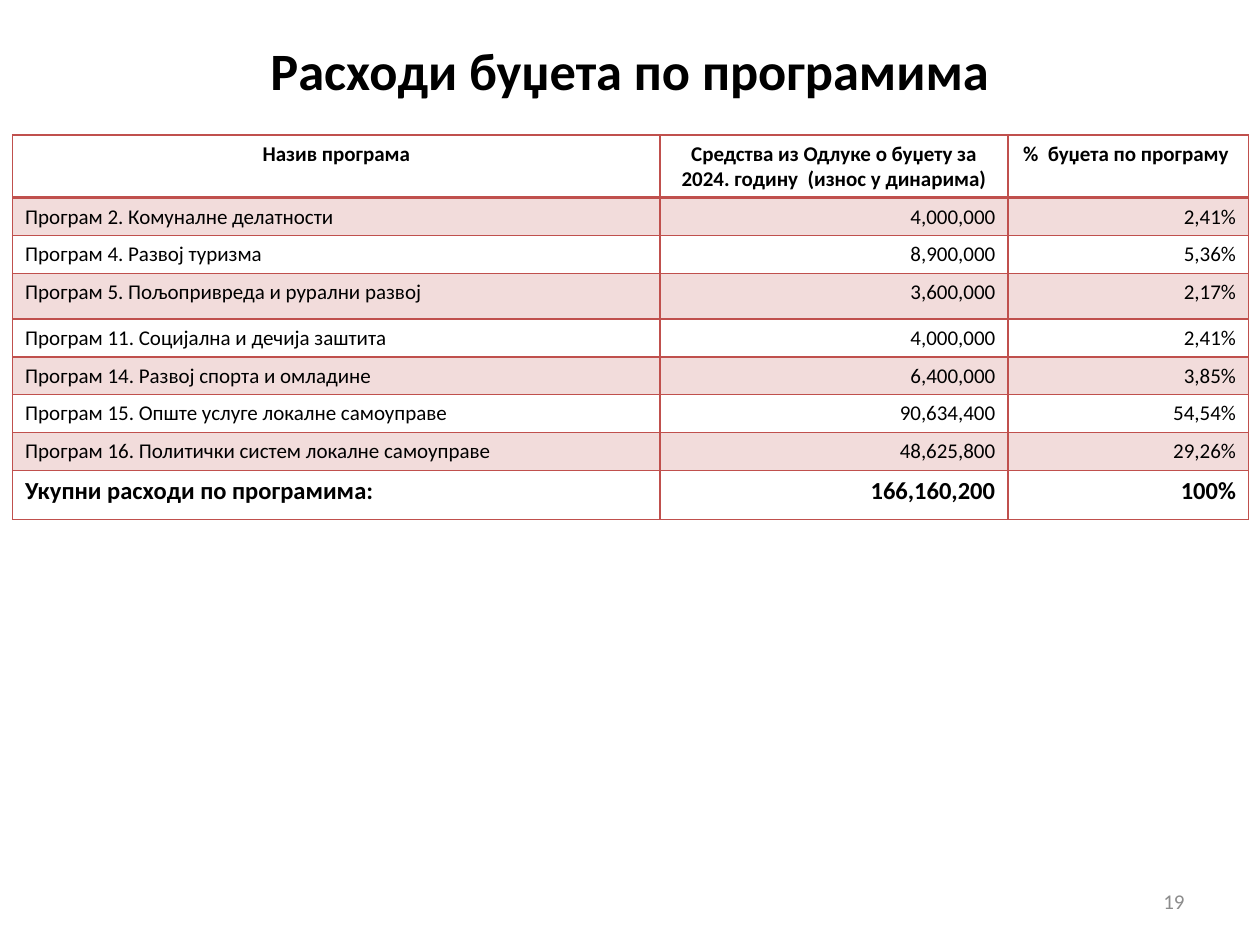
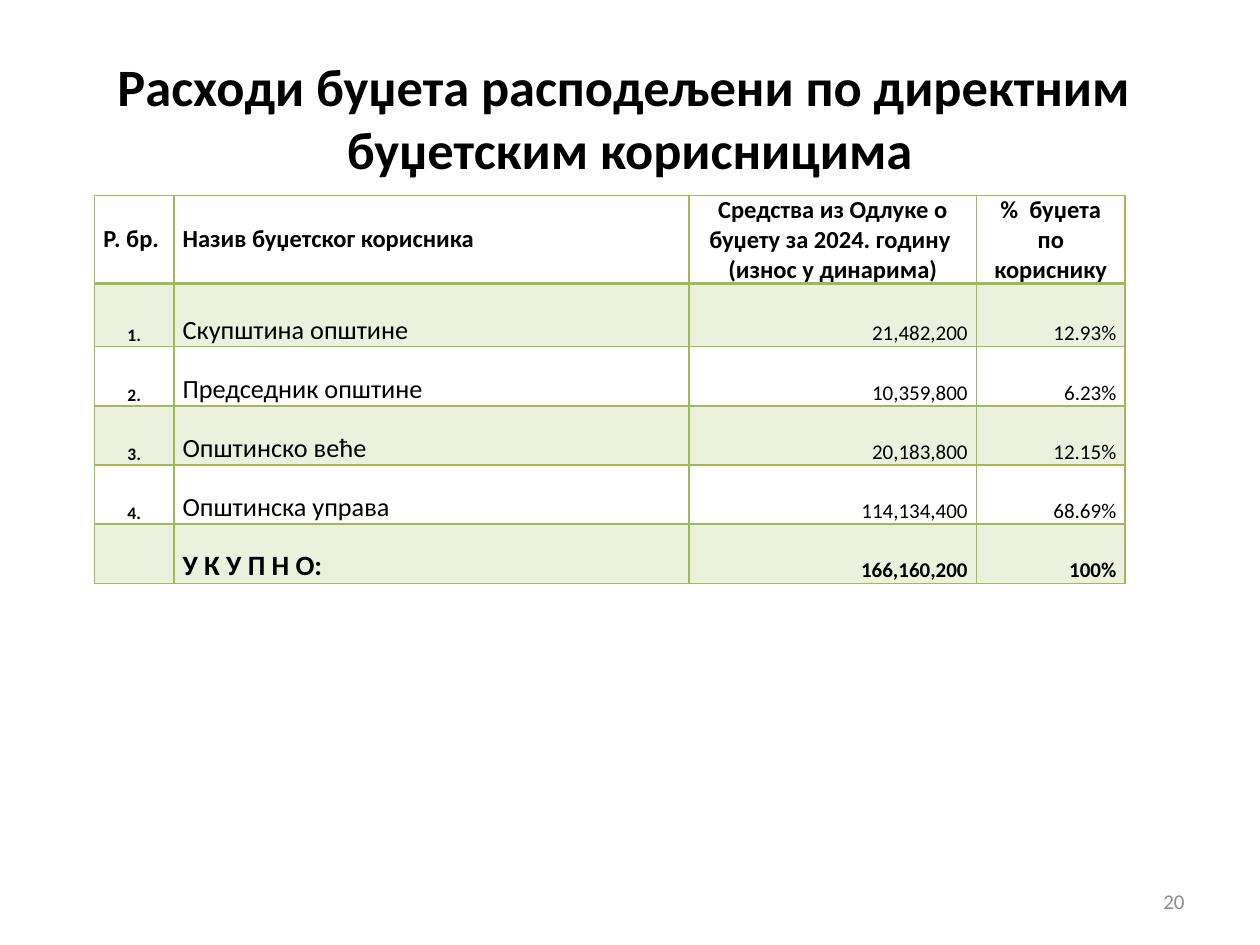
from pptx import Presentation
from pptx.dml.color import RGBColor
from pptx.enum.text import MSO_ANCHOR, PP_ALIGN
from pptx.oxml import parse_xml
from pptx.oxml.ns import nsdecls, qn
from pptx.util import Inches, Pt

FONT, BLACK, GREY = "Calibri", "000000", "8C8C8C"
LEFT, CENTER, RIGHT = PP_ALIGN.LEFT, PP_ALIGN.CENTER, PP_ALIGN.RIGHT
TOP, MIDDLE, BOTTOM = MSO_ANCHOR.TOP, MSO_ANCHOR.MIDDLE, MSO_ANCHOR.BOTTOM


def set_text(tf, text, size, align, bold=False, color=BLACK):
    tf.word_wrap = True
    tf.text = text
    p = tf.paragraphs[0]
    p.alignment = align
    for r in p.runs:
        r.font.name, r.font.size, r.font.bold = FONT, Pt(size), bold
        r.font.color.rgb = RGBColor.from_string(color)


def style_cell(cell, color, top, bottom, banded):
    """Border the cell in the accent colour and tint it when banded."""
    tcPr = cell._tc.get_or_add_tcPr()
    for side, width in (("L", 1), ("R", 1), ("T", top), ("B", bottom)):
        tcPr.append(parse_xml(
            f'<a:ln{side} {nsdecls("a")} w="{Pt(width)}"><a:solidFill>'
            f'<a:srgbClr val="{color}"/></a:solidFill></a:ln{side}>'))
    if banded:
        cell.fill.solid()
        cell.fill.fore_color.rgb = RGBColor.from_string(color)
        tint = parse_xml(f'<a:alpha {nsdecls("a")} val="20000"/>')
        tcPr.find(qn("a:solidFill"))[0].append(tint)
    else:
        cell.fill.background()


# Sizes and bold flags are given per column; "total" is the last row.
programs = dict(
    title="Расходи буџета по програмима", title_box=(0.74, 0.13, 8.52, 0.85),
    number="19", color="C0504D", left=0.1, top=1.07,
    cols=[5.14, 2.76, 1.91], heights=[0.49, 0.29, 0.29, 0.36] + [0.29] * 4 + [0.39],
    margins=(0.1, 0.05), head_anchor=TOP, anchor=TOP,
    head_size=12, head_align=[CENTER] * 3, align=[LEFT, RIGHT, RIGHT],
    sizes=[12] * 3, bold=[False] * 3, total_sizes=[14] * 3,
    rows=[
        ["Назив програма", "Средства из Одлуке о буџету за 2024. годину  (износ у динарима)",
         "%  буџета по програму "],
        ["Програм 2. Комуналне делатности", "4,000,000", "2,41%"],
        ["Програм 4. Развој туризма", "8,900,000", "5,36%"],
        ["Програм 5. Пољопривреда и рурални развој", "3,600,000", "2,17%"],
        ["Програм 11. Социјална и дечија заштита", "4,000,000", "2,41%"],
        ["Програм 14. Развој спорта и омладине", "6,400,000", "3,85%"],
        ["Програм 15. Опште услуге локалне самоуправе", "90,634,400", "54,54%"],
        ["Програм 16. Политички систем локалне самоуправе", "48,625,800", "29,26%"],
        ["Укупни расходи по програмима:", "166,160,200", "100%"],
    ])
users = dict(
    title="Расходи буџета расподељени по директним  буџетским корисницима",
    title_box=(0.5, 0.3, 9, 1.25),
    number="20", color="9BBB59", left=0.75, top=1.55,
    cols=[0.63, 4.09, 2.28, 1.18], heights=[0.6, 0.5] + [0.47] * 4,
    margins=(0.07, 0), head_anchor=MIDDLE, anchor=BOTTOM,
    head_size=14, head_align=[LEFT, LEFT, CENTER, CENTER],
    align=[CENTER, LEFT, RIGHT, RIGHT],
    sizes=[10, 15, 12, 12], bold=[True, False, False, False],
    total_sizes=[10, 16, 12, 12],
    rows=[
        ["Р. бр.", "Назив буџетског корисника",
         "Средства из Одлуке о буџету за 2024. годину  (износ у динарима)",
         "%  буџета по кориснику"],
        ["1.", "Скупштина општине", "21,482,200", "12.93%"],
        ["2.", "Председник општине", "10,359,800", "6.23%"],
        ["3.", "Општинско веће", "20,183,800", "12.15%"],
        ["4.", "Општинска управа", "114,134,400", "68.69%"],
        ["", "У К У П Н О:", "166,160,200", "100%"],
    ])

prs = Presentation()
prs.slide_width, prs.slide_height = Inches(10), Inches(7.5)

for page in (programs, users):
    s = prs.slides.add_slide(prs.slide_layouts[6])

    # Title and slide number
    for box, text, size, align, bold, color in (
            (page["title_box"], page["title"], 30, CENTER, True, BLACK),
            ((7.17, 6.95, 2.33, 0.4), page["number"], 12, RIGHT, False, GREY)):
        tf = s.shapes.add_textbox(*map(Inches, box)).text_frame
        tf.vertical_anchor = MIDDLE
        set_text(tf, text, size, align, bold, color)

    # Table
    rows, cols, heights = page["rows"], page["cols"], page["heights"]
    table = s.shapes.add_table(
        len(rows), len(cols), Inches(page["left"]), Inches(page["top"]),
        Inches(sum(cols)), Inches(sum(heights))).table
    for column, width in zip(table.columns, cols):
        column.width = Inches(width)
    for row, height in zip(table.rows, heights):
        row.height = Inches(height)

    side, edge = map(Inches, page["margins"])
    last = len(rows) - 1
    for i, values in enumerate(rows):
        for j, value in enumerate(values):
            cell = table.cell(i, j)
            cell.margin_left = cell.margin_right = side
            cell.margin_top = cell.margin_bottom = edge
            cell.vertical_anchor = page["head_anchor"] if i == 0 else page["anchor"]
            if i == 0:
                size, align, bold = page["head_size"], page["head_align"][j], True
            elif i == last:
                size, align, bold = page["total_sizes"][j], page["align"][j], True
            else:
                size, align, bold = page["sizes"][j], page["align"][j], page["bold"][j]
            set_text(cell.text_frame, value, size, align, bold)
            style_cell(cell, page["color"], top=2 if i == 1 else 1,
                       bottom=2 if i == 0 else 1, banded=i % 2 == 1)

prs.save("out.pptx")
